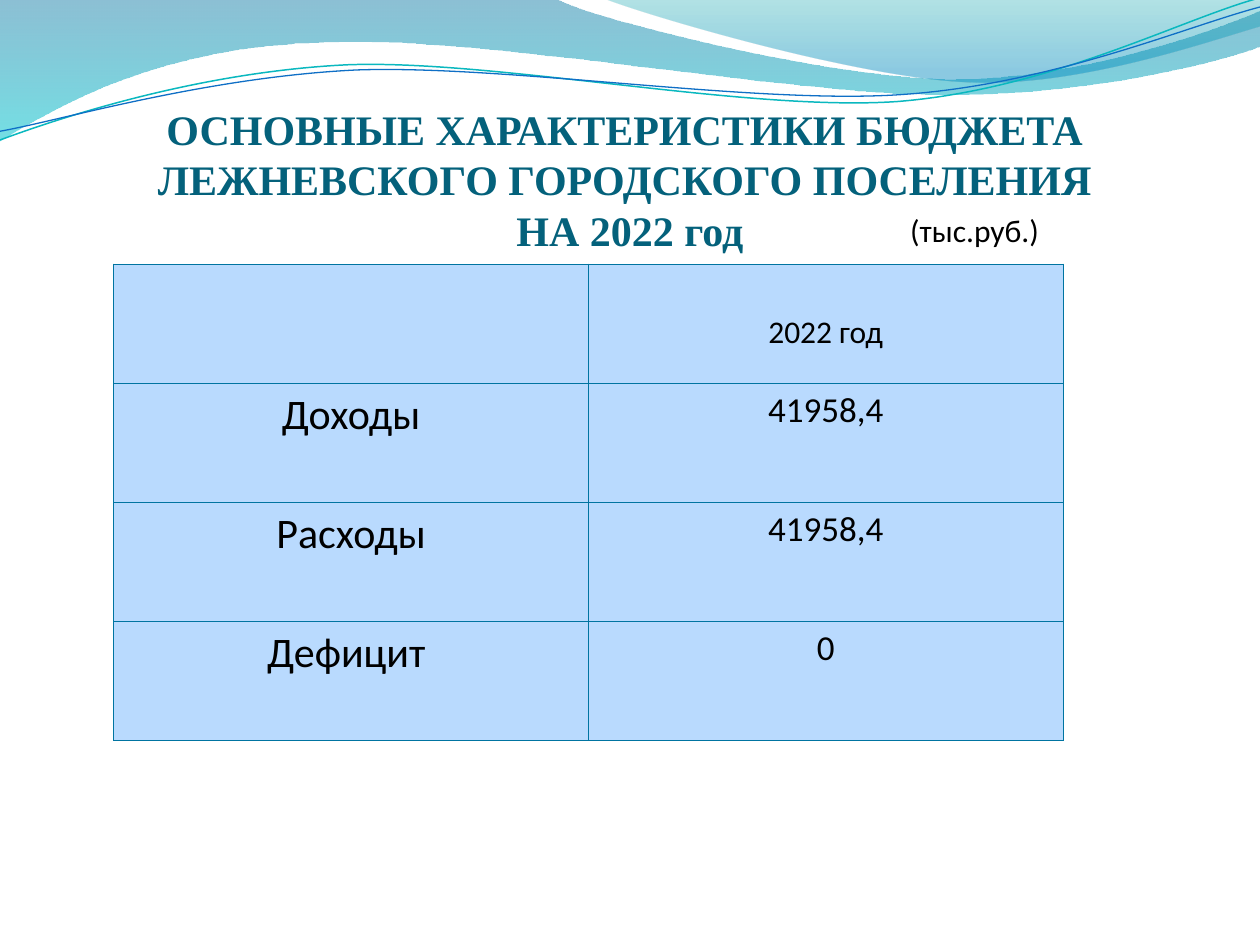
import math
from dataclasses import dataclass
from typing import Optional

from lxml import etree
from pptx import Presentation
from pptx.dml.color import RGBColor
from pptx.enum import text as t
from pptx.oxml import ns
from pptx.util import Pt


@dataclass(frozen=True)
class Theme:
    title: str = "04617B"
    ink: str = "000000"
    cell: str = "B9DAFE"
    edge: str = "0074A1"
    serif: str = "Times New Roman"
    sans: str = "Calibri"
    big: float = 24
    mid: float = 20
    small: float = 18
    rule: float = 0.75


@dataclass(frozen=True)
class Stop:
    pos: float
    color: str
    alpha: int


@dataclass(frozen=True)
class Wave:
    """A path of points: pairs are line ends, sixes are cubic curves."""
    start: tuple
    steps: tuple
    stops: tuple = ()
    color: Optional[str] = None
    width: float = 0
    hub: tuple = (0, 0)
    tilt: float = 0


THEME = Theme()
TILT = -2.7

WAVES = (
    Wave((0, 0), ((317, -1), (343, 12, 478, 45, 546, 45),
                  (614, 45, 690, 19, 720, 6), (721, 26),
                  (708, 32, 626, 55, 537, 54), (448, 54, 275, 20, 185, 24),
                  (93, 26, 33, 60, -1, 81), (0, 0)),
         stops=(Stop(0, "0074A1", 45), Stop(1, "00C6CF", 55))),
    Wave((345, -1), ((367, 8, 491, 45, 554, 47),
                     (616, 50, 692, 23, 720, 15), (720, 0), (345, -1)),
         stops=(Stop(0, "00A1A9", 30), Stop(0.8, "008BBF", 45))),
    Wave((0, 80), ((35, 67, 114, 41, 199, 37), (284, 34, 427, 64, 513, 58),
                   (600, 51, 675, 11, 719, -1)), color="0AB8BF", width=0.85,
         hub=(359.3, 41.4), tilt=TILT),
    Wave((0, 75), ((34, 69, 118, 44, 204, 40), (290, 37, 433, 60, 516, 54),
                   (602, 48, 678, 15, 720, 4)), color="0F6FC6", width=0.75,
         hub=(359.6, 42.5), tilt=TILT),
)

TITLE = ("ОСНОВНЫЕ ХАРАКТЕРИСТИКИ БЮДЖЕТА \v"
         "ЛЕЖНЕВСКОГО ГОРОДСКОГО ПОСЕЛЕНИЯ \vНА 2022 год")
ROWS = (("", "2022 год"), ("Доходы", "41958,4"),
        ("Расходы", "41958,4"), ("Дефицит ", "0"))


def level(dot: tuple, wave: Wave) -> tuple:
    """Turn a point back by the wave's tilt, about its hub."""
    turn = math.radians(-wave.tilt)
    x, y = dot[0] - wave.hub[0], dot[1] - wave.hub[1]
    return (Pt(wave.hub[0] + x * math.cos(turn) - y * math.sin(turn)),
            Pt(wave.hub[1] + x * math.sin(turn) + y * math.cos(turn)))


def bend(shape, steps: tuple) -> None:
    """Gather each curve's three line ends into one cubic curve."""
    lines = iter(list(shape.element.iter(ns.qn("a:lnTo"))))
    for step in steps:
        line = next(lines)
        if len(step) == 6:
            line.addprevious(curve := etree.Element(ns.qn("a:cubicBezTo")))
            for part in (line, next(lines), next(lines)):
                curve.append(part[0])
                part.getparent().remove(part)


def draw_wave(slide, wave: Wave) -> None:
    dots = [level(step[i:i + 2], wave)
            for step in wave.steps for i in range(0, len(step), 2)]
    pen = slide.shapes.build_freeform(*level(wave.start, wave), scale=1.0)
    pen.add_line_segments(dots, close=bool(wave.stops))
    shape = pen.convert_to_shape()
    bend(shape, wave.steps)
    shape.rotation = wave.tilt
    shape.shadow.inherit = False
    if not wave.stops:
        shape.fill.background()
        shape.line.color.rgb = RGBColor.from_string(wave.color)
        shape.line.width = Pt(wave.width)
        return
    shape.line.fill.background()
    shape.fill.gradient()
    shape.fill.gradient_angle = 270
    for spot, stop in zip(shape.fill.gradient_stops, wave.stops):
        spot.position = stop.pos
        spot.color.rgb = RGBColor.from_string(stop.color)
    tints = shape.element.spPr.iter(ns.qn("a:srgbClr"))
    for tint, stop in zip(tints, wave.stops):
        etree.SubElement(tint, ns.qn("a:alpha"), val=str(stop.alpha * 1000))


def style(frame, size: float, color: str, face: str,
          align=t.PP_ALIGN.CENTER, bold: bool = False) -> None:
    for para in frame.paragraphs:
        para.alignment = align
        for item in (para, *para.runs):
            item.font.size = Pt(size)
            item.font.name = face
            item.font.bold = bold
            item.font.color.rgb = RGBColor.from_string(color)


def draw_title(slide) -> None:
    title = slide.shapes.title
    slide.shapes.element.append(title.element)
    title.left, title.top, title.width, title.height = map(
        Pt, (36, 55.5, 648, 90))
    frame = title.text_frame
    frame.text = TITLE
    frame.word_wrap = True
    frame.auto_size = t.MSO_AUTO_SIZE.NONE
    frame.vertical_anchor = t.MSO_ANCHOR.BOTTOM
    frame.margin_left = frame.margin_right = frame.margin_bottom = 0
    frame.margin_top = Pt(3.6)
    style(frame, THEME.big, THEME.title, THEME.serif, bold=True)


def set_edges(cell) -> None:
    props = cell._tc.get_or_add_tcPr()
    for i, side in enumerate("LRTB"):
        line = etree.Element(ns.qn("a:ln" + side), w=str(Pt(THEME.rule)))
        fill = etree.SubElement(line, ns.qn("a:solidFill"))
        etree.SubElement(fill, ns.qn("a:srgbClr"), val=THEME.edge)
        props.insert(i, line)


def draw_table(slide) -> None:
    table = slide.shapes.add_table(
        len(ROWS), 2, Pt(65), Pt(151), Pt(542.5), Pt(272)).table
    table.first_row = table.horz_banding = False
    for r, row in enumerate(ROWS):
        for c, words in enumerate(row):
            cell = table.cell(r, c)
            cell.text = words
            cell.fill.solid()
            cell.fill.fore_color.rgb = RGBColor.from_string(THEME.cell)
            set_edges(cell)
            size = THEME.small if r == 0 else (THEME.big, THEME.mid)[c]
            style(cell.text_frame, size, THEME.ink, THEME.sans)
    table.cell(0, 1).margin_top = Pt(28)


def draw_unit(slide) -> None:
    box = slide.shapes.add_textbox(Pt(513), Pt(117), Pt(130), Pt(29))
    box.text_frame.text = "(тыс.руб.)"
    box.text_frame.word_wrap = True
    style(box.text_frame, THEME.small, THEME.ink, THEME.sans,
          align=t.PP_ALIGN.LEFT)


def main() -> None:
    deck = Presentation()
    deck.slide_width, deck.slide_height = Pt(720), Pt(540)
    slide = deck.slides.add_slide(deck.slide_layouts[5])
    for wave in WAVES:
        draw_wave(slide, wave)
    draw_title(slide)
    draw_table(slide)
    draw_unit(slide)
    deck.save("out.pptx")


if __name__ == "__main__":
    main()
